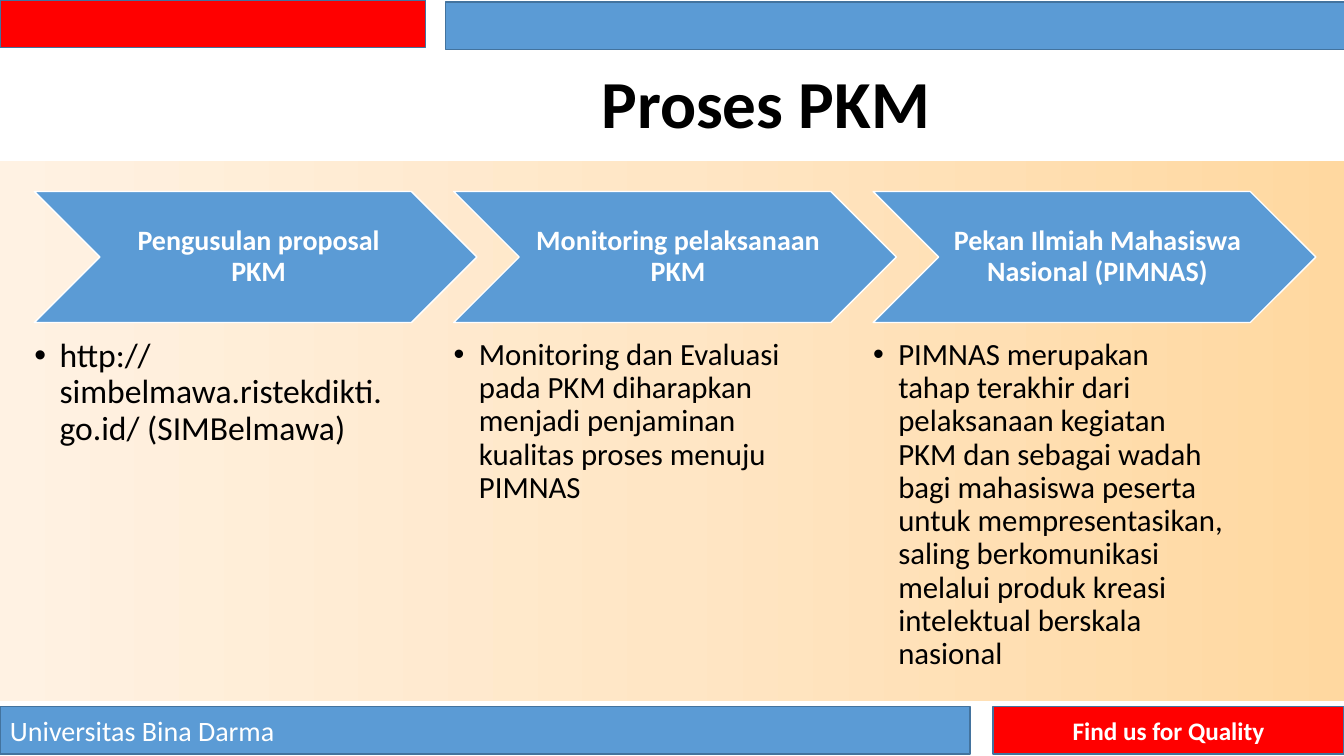
from copy import deepcopy

from lxml.etree import SubElement
from pptx import Presentation
from pptx.dml.color import RGBColor
from pptx.enum.shapes import MSO_SHAPE as Shape
from pptx.enum.text import MSO_ANCHOR as Anchor, MSO_AUTO_SIZE as AutoSize, PP_ALIGN as Align
from pptx.oxml.ns import qn
from pptx.util import Inches, Pt

RED = RGBColor(0xFF, 0x00, 0x00)
BLUE = RGBColor(0x5B, 0x9B, 0xD5)
DARK_BLUE = RGBColor(0x43, 0x73, 0x9E)
WHITE = RGBColor(0xFF, 0xFF, 0xFF)
BLACK = RGBColor(0x00, 0x00, 0x00)
ORANGE = RGBColor(0xFF, 0xD8, 0xA0)
PEACH = RGBColor(0xFF, 0xE6, 0xC5)
CREAM = RGBColor(0xFF, 0xF2, 0xE3)

STEPS = [
    ("Pengusulan proposal PKM", 24,
     "http://simbelmawa.ristekdikti.go.id/ (SIMBelmawa)"),
    ("Monitoring pelaksanaan PKM", 22,
     "Monitoring dan Evaluasi pada PKM diharapkan menjadi penjaminan "
     "kualitas proses menuju PIMNAS"),
    ("Pekan Ilmiah Mahasiswa Nasional (PIMNAS)", 22,
     "PIMNAS merupakan tahap terakhir dari pelaksanaan kegiatan PKM dan "
     "sebagai wadah bagi mahasiswa peserta untuk mempresentasikan, saling "
     "berkomunikasi melalui produk kreasi intelektual berskala nasional"),
]
STEP_LEFT = 0.34
STEP_PITCH = 4.16


class ProcessSlide:
    font_name = "Calibri"

    def __init__(self, page):
        self.page = page
        self.bodies = list(page.placeholders)[1:]

    def label(self, shape, text, size, color, bold=False, align=Align.LEFT,
              anchor=Anchor.MIDDLE, margins=(0.1, 0.05, 0.1, 0.05), spacing=0.9):
        frame = shape.text_frame
        frame.text = text
        frame.word_wrap = True
        frame.auto_size = AutoSize.NONE
        frame.vertical_anchor = anchor
        (frame.margin_left, frame.margin_top,
         frame.margin_right, frame.margin_bottom) = map(Inches, margins)
        para = frame.paragraphs[0]
        para.alignment = align
        para.line_spacing = spacing
        para.space_before = Pt(0)
        font = para.runs[0].font
        font.name = self.font_name
        font.size = Pt(size)
        font.bold = bold
        font.color.rgb = color
        return para

    def block(self, kind, area, fill, line=DARK_BLUE):
        shape = self.page.shapes.add_shape(kind, *map(Inches, area))
        shape.shadow.inherit = False
        shape.fill.solid()
        shape.fill.fore_color.rgb = fill
        shape.line.color.rgb = line
        shape.line.width = Pt(1)
        return shape

    def backdrop(self, area, colors):
        shape = self.block(Shape.RECTANGLE, area, WHITE)
        shape.line.fill.background()
        shape.fill.gradient()
        shape.fill.gradient_angle = 180
        stop_list = shape._element.spPr.find(".//" + qn("a:gsLst"))
        stop_list.insert(1, deepcopy(stop_list[0]))
        for index, (stop, color) in enumerate(zip(shape.fill.gradient_stops, colors)):
            stop.position = index / 2
            stop.color.rgb = color

    def place(self, holder, area):
        holder.left, holder.top, holder.width, holder.height = map(Inches, area)
        self.page.shapes._spTree.append(holder._element)

    def title(self, text, area):
        holder = self.page.shapes.title
        self.place(holder, area)
        self.label(holder, text, 48, BLACK, True, Align.CENTER)

    def bullet_list(self, text, size, area):
        holder = self.bodies.pop(0)
        self.place(holder, area)
        para = self.label(holder, text, size, BLACK, anchor=Anchor.TOP,
                          margins=(0, 0, 0, 0))
        properties = para._p.get_or_add_pPr()
        properties.set("marL", str(Inches(0.25)))
        properties.set("indent", str(Inches(-0.25)))
        SubElement(properties, qn("a:buFont")).set("typeface", "Arial")
        SubElement(properties, qn("a:buChar")).set("char", "•")

    def step(self, left, heading, size, detail):
        arrow = self.block(Shape.CHEVRON, (left, 1.9, 4.39, 1.3), BLUE, WHITE)
        self.label(arrow, heading, 20, WHITE, True, Align.CENTER,
                   margins=(0.09, 0.03, 0.03, 0.03))
        self.bullet_list(detail, size, (left, 3.36, 3.51, 3.36))

    def remove_unused(self):
        for holder in self.bodies:
            self.page.shapes._spTree.remove(holder._element)


def main():
    deck = Presentation()
    deck.slide_width = Inches(13.33)
    deck.slide_height = Inches(7.5)
    slide = ProcessSlide(deck.slides.add_slide(deck.slide_layouts.get_by_name("Comparison")))

    slide.backdrop((0, 1.6, 13.33, 5.36), (ORANGE, PEACH, CREAM))
    slide.block(Shape.RECTANGLE, (0, 0, 4.22, 0.47), RED)
    slide.block(Shape.RECTANGLE, (4.42, 0.02, 8.92, 0.47), BLUE)
    university = slide.block(Shape.RECTANGLE, (0, 7.01, 9.62, 0.47), BLUE)
    slide.label(university, "Universitas Bina Darma", 20, WHITE, spacing=1.0)
    motto = slide.block(Shape.RECTANGLE, (9.85, 7.01, 3.48, 0.47), RED)
    slide.label(motto, "Find us for Quality", 18, WHITE, True, Align.CENTER, spacing=1.0)

    slide.title("Proses PKM", (2.78, 0.57, 9.63, 0.97))
    for index, (heading, size, detail) in enumerate(STEPS):
        slide.step(STEP_LEFT + index * STEP_PITCH, heading, size, detail)
    slide.remove_unused()
    deck.save("out.pptx")


if __name__ == "__main__":
    main()
